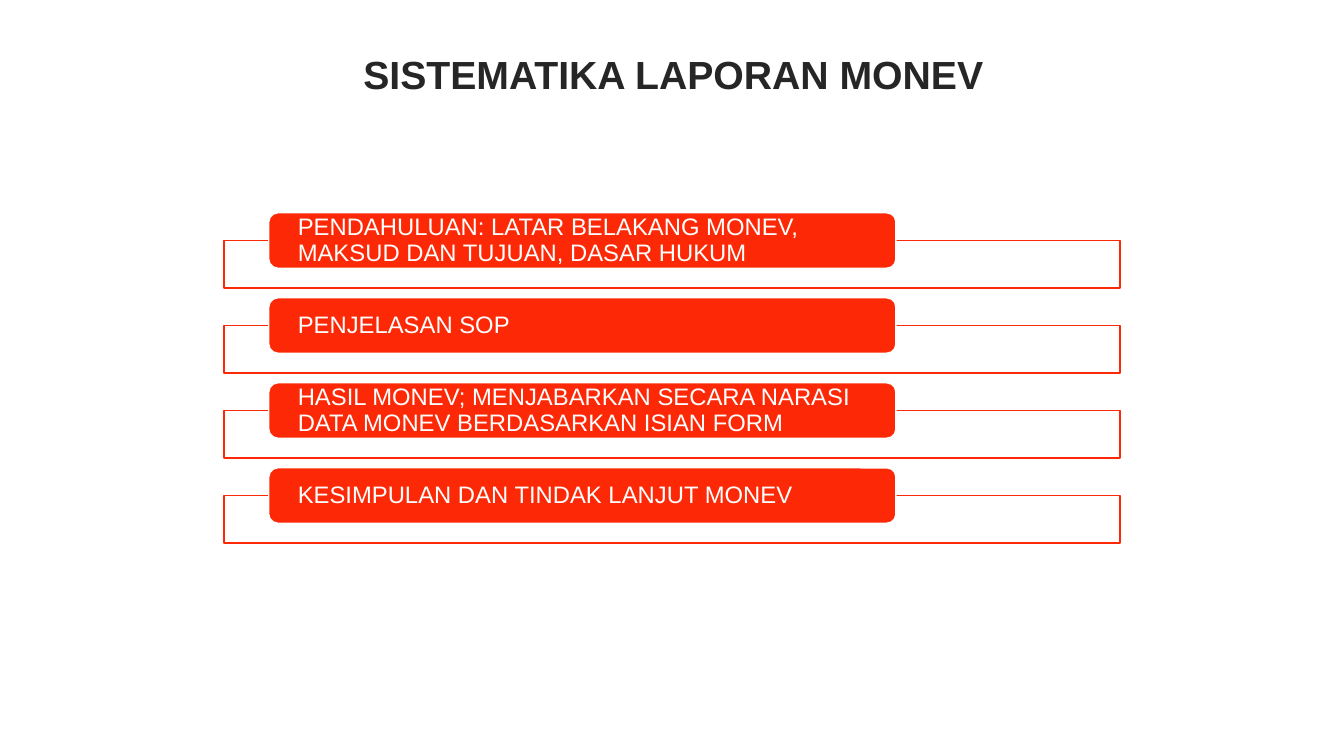
from lxml.etree import SubElement
from pptx import Presentation
from pptx.dml.color import RGBColor
from pptx.enum.shapes import MSO_SHAPE
from pptx.enum.text import MSO_ANCHOR, PP_ALIGN
from pptx.oxml.ns import qn
from pptx.util import Pt

RED = RGBColor(0xFD, 0x29, 0x06)
WHITE = RGBColor(0xFF, 0xFF, 0xFF)
DARK = RGBColor(0x26, 0x26, 0x26)

TOPICS = [
    "PENDAHULUAN: LATAR BELAKANG MONEV, MAKSUD DAN TUJUAN, DASAR HUKUM",
    "PENJELASAN SOP",
    "HASIL MONEV; MENJABARKAN SECARA NARASI DATA MONEV BERDASARKAN ISIAN FORM",
    "KESIMPULAN DAN TINDAK LANJUT MONEV",
]
TOP = 152
STEP = 60.72
DROP = 19.8  # from the top of a label to the top of its frame


class Deck:
    font = "Arial"

    def __init__(self, slide):
        self.slide = slide

    def letter(self, shape, text, size, color, align, inset):
        """Put one vertically centred paragraph into a shape."""
        frame = shape.text_frame
        frame.word_wrap = True
        frame.vertical_anchor = MSO_ANCHOR.MIDDLE
        frame.margin_left = frame.margin_right = Pt(inset)
        frame.margin_top = frame.margin_bottom = 0
        para = frame.paragraphs[0]
        para.text = text
        para.alignment = align
        para.line_spacing = 0.9
        para.font.name = self.font
        para.font.size = Pt(size)
        para.font.color.rgb = color
        return para

    def box(self, kind, left, top, width, height, fill, line):
        shape = self.slide.shapes.add_shape(
            kind, Pt(left), Pt(top), Pt(width), Pt(height))
        shape.shadow.inherit = False
        shape.fill.solid()
        shape.fill.fore_color.rgb = fill
        shape.line.color.rgb = line
        shape.line.width = Pt(1)
        return shape

    def title(self, text):
        shape = self.slide.shapes.add_textbox(
            Pt(25.2), Pt(26.64), Pt(911.5), Pt(56.9))
        para = self.letter(shape, text, 28, DARK, PP_ALIGN.CENTER, 7.2)
        para.space_before = Pt(10)
        para.font.bold = True

    def frame(self, top):
        shape = self.box(MSO_SHAPE.RECTANGLE, 160, top, 640, 34, WHITE, RED)
        color = shape.element.spPr.find(qn("a:solidFill"))[0]
        SubElement(color, qn("a:alpha"), val="90000")

    def label(self, text, top):
        shape = self.box(
            MSO_SHAPE.ROUNDED_RECTANGLE, 192, top, 448, 39.6, RED, WHITE)
        self.letter(shape, text, 17, WHITE, PP_ALIGN.LEFT, 18.8)


def main():
    prs = Presentation()
    prs.slide_width, prs.slide_height = Pt(960), Pt(540)
    deck = Deck(prs.slides.add_slide(prs.slide_layouts[6]))
    deck.title("SISTEMATIKA LAPORAN MONEV")
    for row, topic in enumerate(TOPICS):
        top = TOP + row * STEP
        deck.frame(top + DROP)
        deck.label(topic, top)
    prs.save("out.pptx")


if __name__ == "__main__":
    main()
